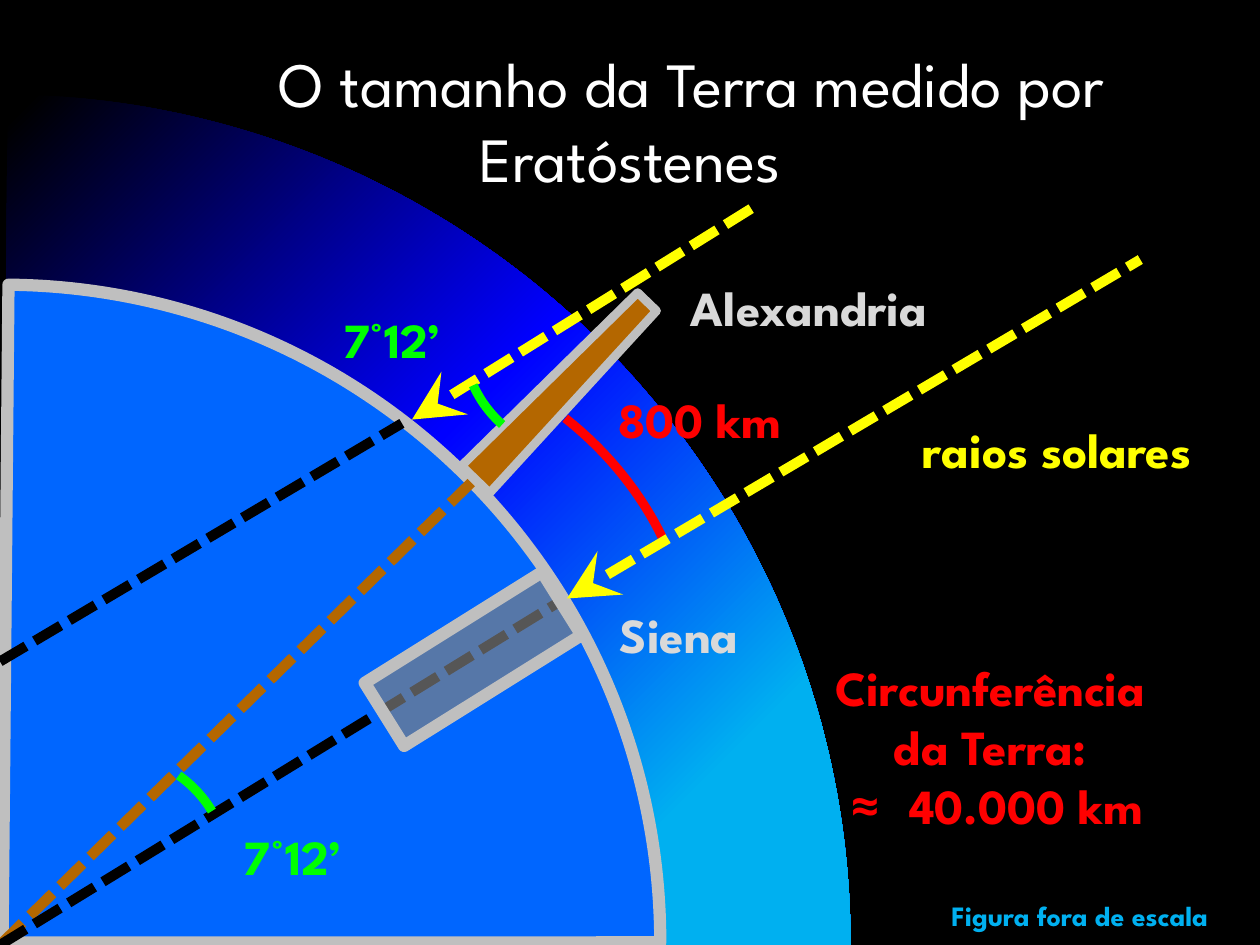
from lxml import etree
from pptx import Presentation
from pptx.dml.color import RGBColor
from pptx.enum.dml import MSO_LINE
from pptx.enum.shapes import MSO_CONNECTOR, MSO_SHAPE
from pptx.enum.text import MSO_ANCHOR, MSO_AUTO_SIZE, PP_ALIGN
from pptx.oxml import parse_xml
from pptx.oxml.ns import nsdecls, qn
from pptx.util import Inches, Pt

BLACK = RGBColor(0x00, 0x00, 0x00)
WHITE = RGBColor(0xFF, 0xFF, 0xFF)
EARTH_BLUE = RGBColor(0x00, 0x66, 0xFF)
SKY_BLUE = RGBColor(0x00, 0xB0, 0xF0)
SILVER = RGBColor(0xBF, 0xBF, 0xBF)
PALE_GRAY = RGBColor(0xD9, 0xD9, 0xD9)
WELL_GRAY = RGBColor(0x80, 0x80, 0x80)
BROWN = RGBColor(0xB4, 0x67, 0x00)
YELLOW = RGBColor(0xFF, 0xFF, 0x00)
GREEN = RGBColor(0x00, 0xFF, 0x00)
RED = RGBColor(0xFF, 0x00, 0x00)
FONT = "League Spartan"

presentation = Presentation()
presentation.slide_width = Inches(10)
presentation.slide_height = Inches(7.5)
slide = presentation.slides.add_slide(presentation.slide_layouts[6])
slide.background.fill.solid()
slide.background.fill.fore_color.rgb = BLACK


def add_figure(kind, box, rotation, adjustments, fill=None, line=None, width=0):
    shape = slide.shapes.add_shape(kind, *[Inches(value) for value in box])
    shape.shadow.inherit = False
    shape.rotation = rotation
    for index, value in enumerate(adjustments):
        shape.adjustments[index] = value
    if fill is None:
        shape.fill.background()
    else:
        shape.fill.solid()
        shape.fill.fore_color.rgb = fill
    if line is None:
        shape.line.fill.background()
    else:
        shape.line.color.rgb = line
        shape.line.width = Pt(width)
    return shape


def add_dashed_line(start, end, color, width=5.75, arrow=False):
    """Draw a dashed line, with the arrowhead at its start if asked for."""
    connector = slide.shapes.add_connector(
        MSO_CONNECTOR.STRAIGHT, *[Inches(value) for value in start + end])
    connector.line.color.rgb = color
    connector.line.width = Pt(width)
    connector.line.dash_style = MSO_LINE.SQUARE_DOT
    if arrow:
        etree.SubElement(connector.line._get_or_add_ln(), qn("a:headEnd"),
                         type="stealth", w="lg", len="lg")
    etree.SubElement(connector._element.spPr, qn("a:effectLst"))


# Sky and Earth: quarter discs around the lower left corner
QUARTER = (108.311, 162)
sky = add_figure(MSO_SHAPE.PIE, (-6.75, 0.75, 13.5, 13.5), 90, QUARTER, SKY_BLUE)
stops = "".join(
    f'<a:gs pos="{position}000"><a:srgbClr val="{color}"/></a:gs>'
    for position, color in ((34, "00B0F0"), (52, "0000FF"), (74, "000000")))
gradient = parse_xml(
    f'<a:gradFill {nsdecls("a")} rotWithShape="0"><a:gsLst>{stops}</a:gsLst>'
    '<a:path path="circle"><a:fillToRect l="100000" t="100000"/></a:path></a:gradFill>')
solid_fill = sky._element.spPr.find(qn("a:solidFill"))
sky._element.spPr.replace(solid_fill, gradient)

title = slide.shapes.add_textbox(Inches(0), Inches(0.3), Inches(10), Inches(1.25))
title.text_frame.word_wrap = True
title.text_frame.vertical_anchor = MSO_ANCHOR.TOP
paragraph = title.text_frame.paragraphs[0]
paragraph.text = "\tO tamanho da Terra medido por Eratóstenes"
paragraph.alignment = PP_ALIGN.CENTER
tab_stops = etree.SubElement(paragraph._p.get_or_add_pPr(), qn("a:tabLst"))
etree.SubElement(tab_stops, qn("a:tab"), pos=str(Inches(0.98)), algn="l")
paragraph.font.name = FONT
paragraph.font.size = Pt(36)
paragraph.font.color.rgb = WHITE

add_figure(MSO_SHAPE.PIE, (-5.2, 2.26, 10.44, 10.44), 90, QUARTER,
           EARTH_BLUE, SILVER, 7)

# Lines inside the Earth and the ray at Alexandria
add_dashed_line((0, 7.5), (3.74, 3.83), BROWN, 6)
add_dashed_line((0, 7.5), (4.45, 4.77), BLACK)
add_dashed_line((0, 5.25), (3.19, 3.36), BLACK)
add_dashed_line((3.27, 3.33), (6.02, 1.62), YELLOW, arrow=True)

# Obelisk, well and arcs
add_figure(MSO_SHAPE.TRAPEZOID, (4.3, 2.12, 0.31, 1.96), 44, (0.165,),
           BROWN, SILVER, 5)
well = add_figure(MSO_SHAPE.TRAPEZOID, (3.46, 4.4, 0.59, 1.66), 238, (0,),
                  WELL_GRAY, SILVER, 7)
well_color = well._element.spPr.find(qn("a:solidFill"))[0]
etree.SubElement(well_color, qn("a:alpha"), val="68000")

ANGLE = (193.126, 207.268)
for box, rotation, adjustments, color in (
    ((3.66, 1.72, 1.9, 1.87), 296.6, ANGLE, GREEN),
    ((-0.07, 6, 1.9, 1.87), 110, ANGLE, GREEN),
    ((0.17, 2.44, 5.11, 5.6), 103.6, (182.864, 198.641), RED),
):
    arc = add_figure(MSO_SHAPE.ARC, box, rotation, adjustments, line=color, width=5.25)
    arc._element.spPr.find(qn("a:xfrm")).set("flipH", "1")

# Ray at Siena
add_dashed_line((4.5, 4.75), (9.05, 2.06), YELLOW, arrow=True)

# Labels
for lines, box, color, size in (
    (["7°12’"], (1.69, 6.51, 1.26, 0.57), GREEN, 28),
    (["7°12’"], (2.48, 2.41, 1.26, 0.57), GREEN, 28),
    (["800 km"], (4.69, 3.04, 1.73, 0.57), RED, 28),
    (["Alexandria"], (5.16, 2.15, 2.52, 0.57), PALE_GRAY, 28),
    (["Siena"], (4.13, 4.75, 2.52, 0.57), PALE_GRAY, 28),
    (["Circunferência ", "da Terra: ", "≈ 40.000 km"],
     (6.02, 5.17, 3.78, 1.51), RED, 28),
    (["Figura fora de escala"], (7.31, 7.08, 2.52, 0.37), SKY_BLUE, 16),
    (["raios solares"], (7.05, 3.28, 2.68, 0.57), YELLOW, 28),
):
    label = slide.shapes.add_textbox(*[Inches(value) for value in box])
    frame = label.text_frame
    frame.word_wrap = size == 28
    frame.auto_size = MSO_AUTO_SIZE.SHAPE_TO_FIT_TEXT
    for index, line in enumerate(lines):
        paragraph = frame.paragraphs[0] if index == 0 else frame.add_paragraph()
        paragraph.alignment = PP_ALIGN.CENTER
        paragraph.font.name = FONT
        paragraph.font.size = Pt(size)
        paragraph.font.bold = True
        paragraph.font.color.rgb = color
        if line.startswith("≈ "):
            sign = paragraph.add_run()
            sign.text = "≈ "
            sign.font.name = "Noto Sans Mono"
            line = line.removeprefix("≈ ")
        paragraph.add_run().text = line

presentation.save("out.pptx")
